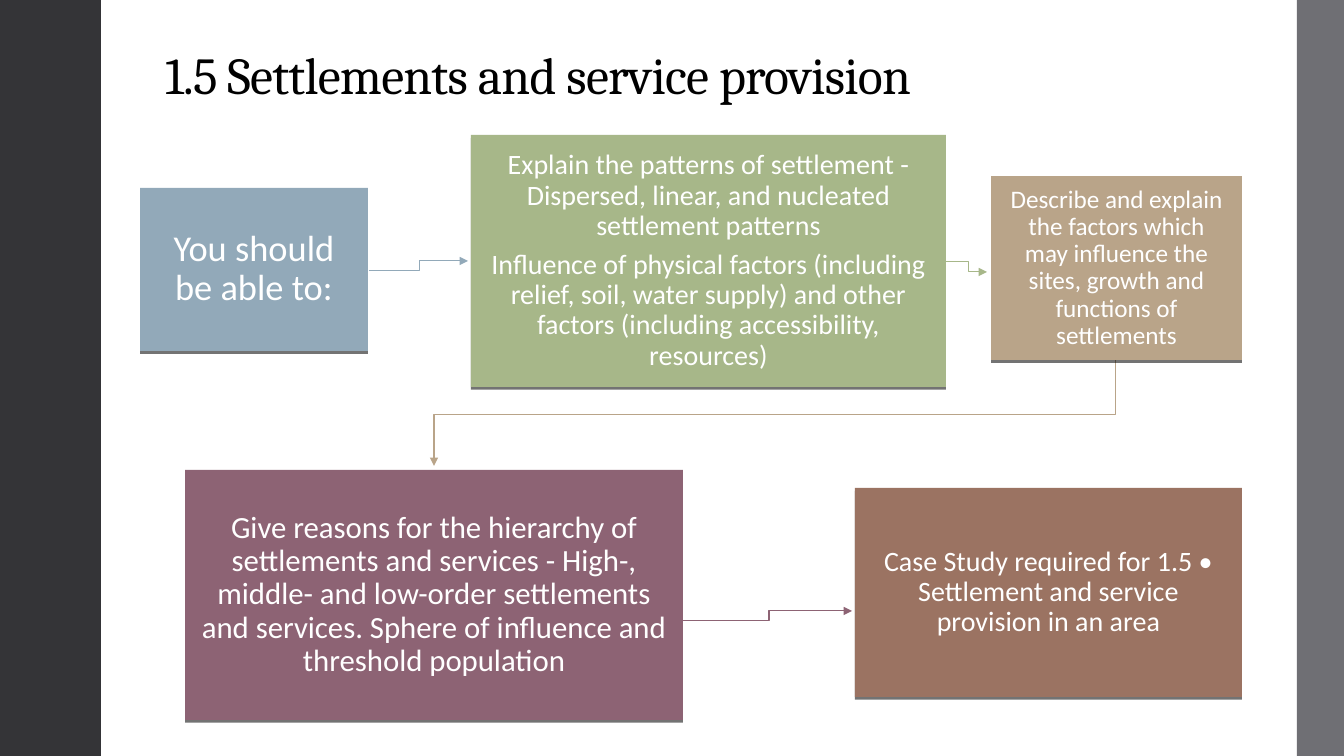
from lxml.etree import SubElement
from pptx import Presentation
from pptx.dml.color import RGBColor
from pptx.enum.shapes import MSO_SHAPE
from pptx.enum.text import MSO_ANCHOR, MSO_AUTO_SIZE, PP_ALIGN
from pptx.oxml import parse_xml
from pptx.oxml.ns import nsdecls, qn
from pptx.util import Pt

PX = 914400 / 100.8
COLOURS = {
    "ink": "000000", "white": "FFFFFF", "dark": "343437", "grey": "6F6F74",
    "blue": "92A9B9", "green": "A7B789", "sand": "B9A489",
    "plum": "8D6374", "brown": "9B7362",
}
SHADOW = (
    f'<a:effectLst {nsdecls("a")}><a:outerShdw blurRad="0" dist="25400" dir="5400000" '
    'algn="ctr" rotWithShape="0"><a:srgbClr val="000000"><a:alpha val="55000"/>'
    '</a:srgbClr></a:outerShdw></a:effectLst>'
)


def colour(name):
    return RGBColor.from_string(COLOURS[name])


def add_block(page, name, *bounds):
    block = page.shapes.add_shape(MSO_SHAPE.RECTANGLE, *[round(v * PX) for v in bounds])
    block.shadow.inherit = False
    block.fill.solid()
    block.fill.fore_color.rgb = colour(name)
    block.line.fill.background()
    return block


deck = Presentation()
deck.slide_width, deck.slide_height = round(1344 * PX), round(756 * PX)
page = deck.slides.add_slide(deck.slide_layouts[5])

add_block(page, "dark", 0, 0, 101, 756)
add_block(page, "grey", 1297, 0, 47, 756)

title = page.shapes.title
for key, value in {"left": 155, "top": 41, "width": 1087, "height": 70}.items():
    setattr(title, key, round(value * PX))
frame = title.text_frame
frame.text = "1.5 Settlements and service provision"
frame_format = {
    "word_wrap": True, "auto_size": MSO_AUTO_SIZE.NONE, "vertical_anchor": MSO_ANCHOR.BOTTOM,
}
for key, value in frame_format.items():
    setattr(frame, key, value)
para = frame.paragraphs[0]
para.alignment = PP_ALIGN.LEFT
para.line_spacing = 0.9
span = para.runs[0]
for key, value in {"name": "Cambria", "size": Pt(37)}.items():
    setattr(span.font, key, value)
span.font.color.rgb = colour("ink")
span.font._element.set("spc", "-50")

arrows = [
    ("blue", [(369, 271), (420, 271), (420, 261), (468, 261)]),
    ("green", [(946, 262), (969, 262), (969, 272), (987, 272)]),
    ("sand", [(1116, 360), (1116, 415), (434, 415), (434, 466)]),
    ("plum", [(683, 621), (769, 621), (769, 611), (852, 611)]),
]
for name, points in arrows:
    builder = page.shapes.build_freeform(*points[0], scale=PX)
    builder.add_line_segments(points[1:], close=False)
    arrow = builder.convert_to_shape()
    arrow.shadow.inherit = False
    arrow.fill.background()
    arrow.line.color.rgb = colour(name)
    arrow.line.width = Pt(0.75)
    SubElement(arrow.line._get_or_add_ln(), qn("a:tailEnd"), type="triangle")

steps = [
    ("blue", (140, 188, 228, 163), 26, 5.2, ["You should be able to:"]),
    ("green", (471, 135, 475, 252), 20, 6.3, [
        "Explain the patterns of settlement - Dispersed, linear, and nucleated settlement patterns",
        "Influence of physical factors (including relief, soil, water supply) and other factors "
        "(including accessibility, resources)",
    ]),
    ("sand", (991, 176, 251, 184), 18, 5.2, [
        "Describe and explain the factors which may influence the sites, growth and functions "
        "of settlements",
    ]),
    ("plum", (185, 470, 498, 250), 22, 6.3, [
        "Give reasons for the hierarchy of settlements and services - High-, middle- and "
        "low-order settlements and services. Sphere of influence and threshold population",
    ]),
    ("brown", (855, 488, 387, 209), 20, 5.2, [
        "Case Study required for 1.5 • Settlement and service provision in an area",
    ]),
]
box_format = {
    "word_wrap": True, "vertical_anchor": MSO_ANCHOR.MIDDLE,
    "margin_left": round(15 * PX), "margin_right": round(15 * PX),
    "margin_top": round(16 * PX), "margin_bottom": round(16 * PX),
}
for name, bounds, size, gap, lines in steps:
    box = add_block(page, name, *bounds)
    properties = box._element.spPr
    properties.replace(properties.find(qn("a:effectLst")), parse_xml(SHADOW))
    frame = box.text_frame
    for key, value in box_format.items():
        setattr(frame, key, value)
    frame.text = "\n".join(lines)
    for para in frame.paragraphs:
        para_format = {"alignment": PP_ALIGN.CENTER, "line_spacing": 0.9, "space_after": Pt(gap)}
        for key, value in para_format.items():
            setattr(para, key, value)
        span = para.runs[0]
        for key, value in {"name": "Calibri", "size": Pt(size)}.items():
            setattr(span.font, key, value)
        span.font.color.rgb = colour("white")

deck.save("out.pptx")
